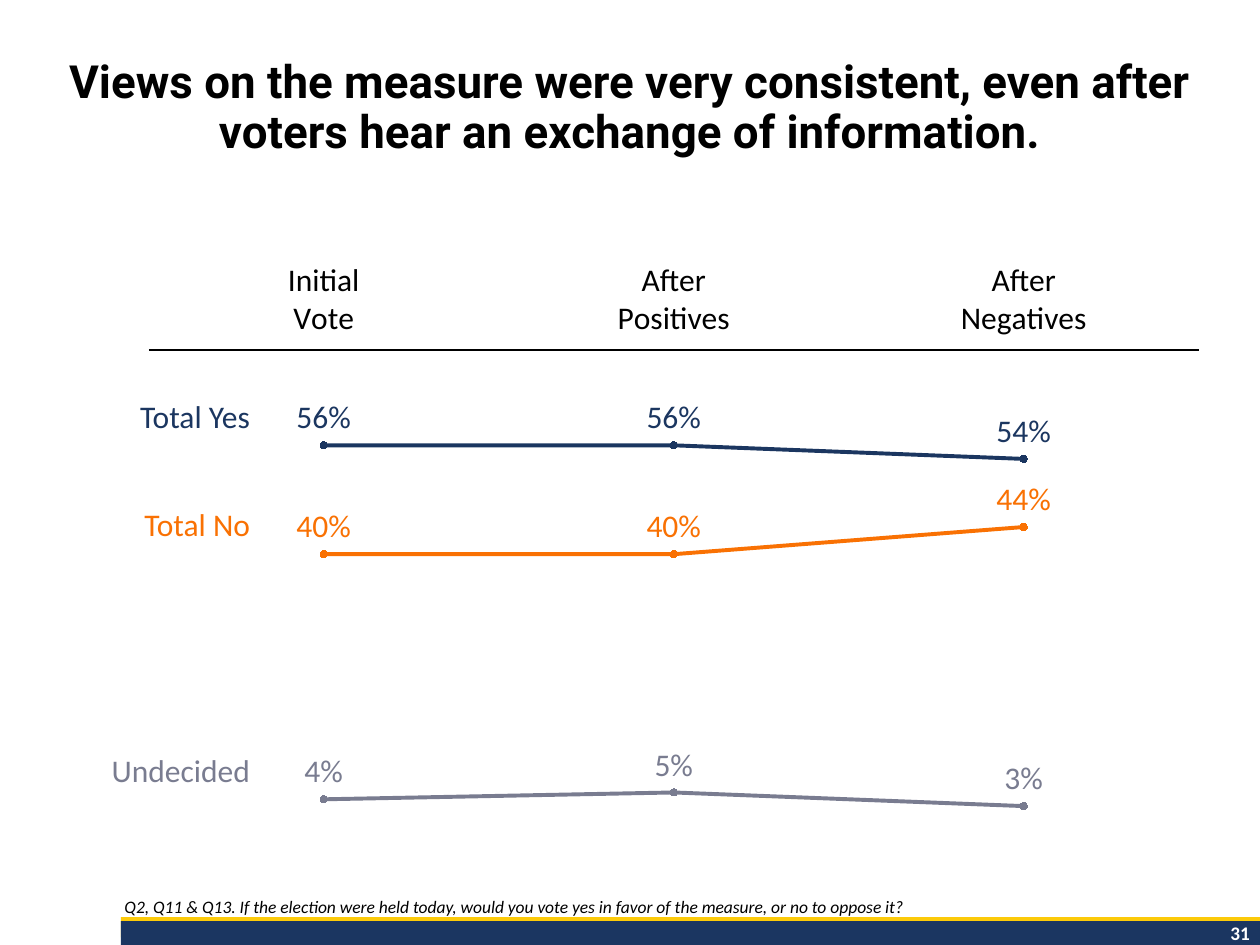
import pptx
import pptx.chart.data
import pptx.dml.color
import pptx.enum.chart
import pptx.enum.shapes
import pptx.enum.text
import pptx.oxml
import pptx.oxml.ns
import pptx.util

Cm, Pt = pptx.util.Cm, pptx.util.Pt
PP_ALIGN = pptx.enum.text.PP_ALIGN
ANCHOR = pptx.enum.text.MSO_ANCHOR

TITLE = ("Views on the measure were very consistent, even after voters hear "
         "an exchange of information.")
NOTE = ("Q2, Q11 & Q13. If the election were held today, would you vote yes "
        "in favor of the measure, or no to oppose it?")
PAGE_NUMBER = "31"
STAGES = ["Initial\nVote", "After\nPositives", "After\nNegatives"]
VOTES = [
    ("Total Yes", (0.56, 0.56, 0.54), "yes"),
    ("Total No", (0.40, 0.40, 0.44), "no"),
    ("Undecided", (0.04, 0.05, 0.03), "undecided"),
]

THEME = {
    "colors": {"yes": "1B3660", "no": "F97103", "undecided": "797C90",
               "text": "000000", "light": "FFFFFF",
               "gold": "FCCA09", "navy": "1B3661"},
    "sizes": {"title": 26.1, "chart": 18, "page": 11, "note": 10},
    "heading": "Roboto",
    "body": "Calibri",
}

SLIDE_W, SLIDE_H = 25.4, 19.05
FOOTER_X = 2.44
FOOTER_BARS = [("gold", 18.49, 0.41), ("navy", 18.57, 0.48)]
CHART_X, CHART_Y, CHART_W, CHART_H = 2.59, 4.8, 22.76, 12.27
PLOT = {"x": 0.018, "y": 0.184, "w": 0.93, "h": 0.783}  # shares of the chart
VALUE_MAX = 0.7
LABEL_X, LABEL_W, LABEL_H, LABEL_RISE = 0.64, 4.65, 1.02, 0.6


def color(name):
    return pptx.dml.color.RGBColor.from_string(THEME["colors"][name])


def set_font(font, size, color_name="text", face="body", bold=False, italic=False):
    font.name = THEME[face]
    font.size = Pt(THEME["sizes"][size])
    font.color.rgb = color(color_name)
    font.bold, font.italic = bold, italic


def add_text(s, box, text, size, align=PP_ALIGN.LEFT, anchor=ANCHOR.TOP,
             line_spacing=1.0, **font):
    tf = s.shapes.add_textbox(*map(Cm, box)).text_frame
    tf.word_wrap = True
    tf.vertical_anchor = anchor
    p = tf.paragraphs[0]
    p.alignment, p.line_spacing = align, line_spacing
    r = p.add_run()
    r.text = text
    set_font(r.font, size, **font)


def add_footer(s):
    for name, top, height in FOOTER_BARS:
        sp = s.shapes.add_shape(
            pptx.enum.shapes.MSO_SHAPE.RECTANGLE,
            Cm(FOOTER_X), Cm(top), Cm(SLIDE_W - FOOTER_X), Cm(height))
        sp.shadow.inherit = False
        sp.fill.solid()
        sp.fill.fore_color.rgb = color(name)
        sp.line.fill.background()
    add_text(s, (21.69, 18.44, 3.76, 0.74), PAGE_NUMBER, "page",
             align=PP_ALIGN.RIGHT, color_name="light", bold=True)
    add_text(s, (2.26, 17.25, 23.09, 1.37), NOTE, "note",
             anchor=ANCHOR.BOTTOM, line_spacing=0.9, italic=True)


def set_plot_layout(chart):
    """Fix the inner plot area, which python-pptx cannot place."""
    area = chart.plots[0]._element.getparent()
    for old in area.findall(pptx.oxml.ns.qn("c:layout")):
        area.remove(old)
    sizes = "".join(f'<c:{key} val="{share}"/>' for key, share in PLOT.items())
    area.insert(0, pptx.oxml.parse_xml(
        f'<c:layout {pptx.oxml.ns.nsdecls("c")}><c:manualLayout>'
        '<c:layoutTarget val="inner"/><c:xMode val="edge"/><c:yMode val="edge"/>'
        f'{sizes}</c:manualLayout></c:layout>'))


def style_axes(chart):
    xl = pptx.enum.chart
    values, stages = chart.value_axis, chart.category_axis
    values.minimum_scale, values.maximum_scale = 0, VALUE_MAX
    values.has_major_gridlines = False
    values.visible = False
    values.crosses = xl.XL_AXIS_CROSSES.MAXIMUM  # stages run along the top
    stages.tick_label_position = xl.XL_TICK_LABEL_POSITION.HIGH
    stages.major_tick_mark = stages.minor_tick_mark = xl.XL_TICK_MARK.NONE
    stages.format.line.color.rgb = color("text")
    stages.format.line.width = Pt(0.75)
    set_font(stages.tick_labels.font, "chart")


def style_series(series, color_name):
    series.smooth = False
    series.format.line.color.rgb = color(color_name)
    series.format.line.width = Pt(2.25)
    marker = series.marker
    marker.style = pptx.enum.chart.XL_MARKER_STYLE.CIRCLE
    marker.size = 4
    marker.format.fill.solid()
    marker.format.fill.fore_color.rgb = color(color_name)
    marker.format.line.color.rgb = color(color_name)
    labels = series.data_labels
    labels.show_value = True
    labels.number_format, labels.number_format_is_linked = "0%", False
    labels.position = pptx.enum.chart.XL_LABEL_POSITION.ABOVE
    set_font(labels.font, "chart", color_name)


def add_vote_chart(s):
    data = pptx.chart.data.CategoryChartData(number_format="0%")
    data.categories = STAGES
    for name, shares, _ in VOTES:
        data.add_series(name, shares)
    chart = s.shapes.add_chart(
        pptx.enum.chart.XL_CHART_TYPE.LINE_MARKERS,
        Cm(CHART_X), Cm(CHART_Y), Cm(CHART_W), Cm(CHART_H), data).chart
    chart.has_legend = chart.has_title = False
    set_font(chart.font, "note")
    chart.plots[0].vary_by_categories = False
    set_plot_layout(chart)
    style_axes(chart)
    for series, (_, _, color_name) in zip(chart.plots[0].series, VOTES):
        style_series(series, color_name)


def add_vote_labels(s):
    """Name each line beside its first value."""
    plot_top = CHART_Y + PLOT["y"] * CHART_H
    plot_height = PLOT["h"] * CHART_H
    for name, shares, color_name in VOTES:
        point = plot_top + plot_height * (1 - shares[0] / VALUE_MAX)
        top = point - LABEL_RISE - LABEL_H / 2
        add_text(s, (LABEL_X, top, LABEL_W, LABEL_H), name, "chart",
                 align=PP_ALIGN.RIGHT, color_name=color_name)


def main():
    prs = pptx.Presentation()
    prs.slide_width, prs.slide_height = Cm(SLIDE_W), Cm(SLIDE_H)
    s = prs.slides.add_slide(prs.slide_layouts[6])
    add_footer(s)
    add_vote_chart(s)
    add_vote_labels(s)
    add_text(s, (0, 1.07, SLIDE_W, 3.1), TITLE, "title", align=PP_ALIGN.CENTER,
             line_spacing=0.9, face="heading", bold=True)
    prs.save("out.pptx")


if __name__ == "__main__":
    main()
